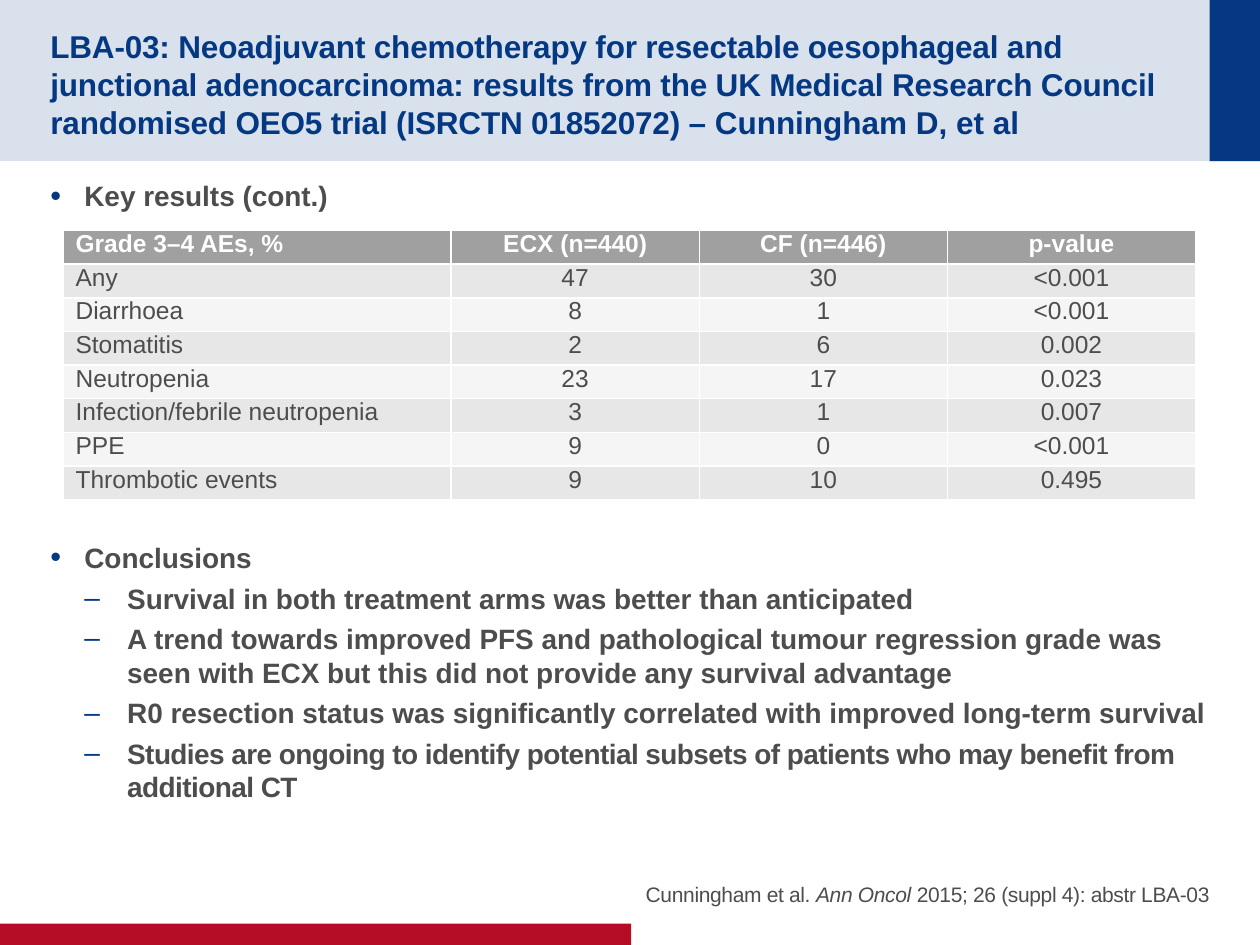
from lxml import etree
from pptx import Presentation
from pptx.dml.color import RGBColor
from pptx.enum.shapes import MSO_SHAPE
from pptx.enum.text import MSO_ANCHOR, MSO_AUTO_SIZE, PP_ALIGN
from pptx.oxml.ns import qn
from pptx.util import Inches, Pt

RECTANGLE = MSO_SHAPE.RECTANGLE
TOP, MIDDLE, BOTTOM = MSO_ANCHOR.TOP, MSO_ANCHOR.MIDDLE, MSO_ANCHOR.BOTTOM
LEFT, CENTER, RIGHT = PP_ALIGN.LEFT, PP_ALIGN.CENTER, PP_ALIGN.RIGHT
NO_AUTOFIT = MSO_AUTO_SIZE.NONE
TITLE_ONLY = 5

COLORS = {
    "navy": "043882", "pale": "D9E1EC", "red": "B60D27", "text": "4D4D4D",
    "white": "FFFFFF", "header": "A0A0A0", "odd": "E7E7E7", "even": "F5F5F5",
}

TITLE = [
    ("LBA-03: Neoadjuvant chemotherapy for resectable oesophageal and junctional "
     "adenocarcinoma: results from the UK Medical Research Council randomised OEO5 "
     "trial (ISRCTN 01852072) ", {"spacing": -0.1}),
    ("– Cunningham D, et al", {}),
]
ADVERSE_EVENTS = [
    ("Grade 3–4 AEs, %", "ECX (n=440)", "CF (n=446)", "p-value"),
    ("Any", "47", "30", "<0.001"),
    ("Diarrhoea", "8", "1", "<0.001"),
    ("Stomatitis", "2", "6", "0.002"),
    ("Neutropenia", "23", "17", "0.023"),
    ("Infection/febrile neutropenia", "3", "1", "0.007"),
    ("PPE", "9", "0", "<0.001"),
    ("Thrombotic events", "9", "10", "0.495"),
]
CONCLUSIONS = [
    ("Conclusions", 0, 0),
    ("Survival in both treatment arms was better than anticipated", 1, 0),
    ("A trend towards improved PFS and pathological tumour regression grade was "
     "seen with ECX but this did not provide any survival advantage", 1, 0),
    ("R0 resection status was significantly correlated with improved long-term "
     "survival", 1, 0),
    ("Studies are ongoing to identify potential subsets of patients who may "
     "benefit from additional CT", 1, -0.3),
]
CITATION = [
    ("Cunningham et al. ", {"spacing": -0.2}),
    ("Ann Oncol", {"spacing": -0.2, "italic": True}),
    (" 2015; 26 (suppl 4): abstr LBA-03", {"spacing": -0.2}),
]


class SlideBuilder:
    """Holds the house style and the slide being built."""

    font = "Arial"
    bullets = [("•", 0.27, 0.27, 110), ("–", 0.61, 0.34, 100)]

    def __init__(self, slide):
        self.slide = slide

    def color(self, name):
        return RGBColor.from_string(COLORS[name])

    def format_run(self, run, size, color, bold=False, italic=False, spacing=0):
        run.font.name = self.font
        run.font.size = Pt(size)
        run.font.bold = bold
        run.font.italic = italic
        run.font.color.rgb = self.color(color)
        if spacing:
            run._r.get_or_add_rPr().set("spc", str(round(spacing * 100)))

    def add_runs(self, paragraph, parts, size, color, bold=False):
        for text, options in parts:
            run = paragraph.add_run()
            run.text = text
            self.format_run(run, size, color, bold, **options)

    def set_frame(self, text_frame, anchor, top=0.0, bottom=0.0):
        text_frame.word_wrap = True
        text_frame.auto_size = NO_AUTOFIT
        text_frame.vertical_anchor = anchor
        text_frame.margin_left = text_frame.margin_right = 0
        text_frame.margin_top = Inches(top)
        text_frame.margin_bottom = Inches(bottom)

    def set_bullet(self, paragraph, level):
        character, margin, hanging, size = self.bullets[level]
        paragraph.level = level
        properties = paragraph._p.get_or_add_pPr()
        properties.set("marL", str(Inches(margin)))
        properties.set("indent", str(-Inches(hanging)))
        bullet_color = etree.SubElement(properties, qn("a:buClr"))
        etree.SubElement(bullet_color, qn("a:srgbClr"), val=COLORS["navy"])
        etree.SubElement(properties, qn("a:buSzPct"), val=str(size * 1000))
        etree.SubElement(properties, qn("a:buFont"), typeface=self.font)
        etree.SubElement(properties, qn("a:buChar"), char=character)

    def band(self, left, top, width, height, color):
        shape = self.slide.shapes.add_shape(
            RECTANGLE, Inches(left), Inches(top), Inches(width), Inches(height))
        shape.shadow.inherit = False
        shape.fill.solid()
        shape.fill.fore_color.rgb = self.color(color)
        shape.line.fill.background()

    def title(self, left, top, width, height, parts):
        title = self.slide.shapes.title
        title.left, title.top = Inches(left), Inches(top)
        title.width, title.height = Inches(width), Inches(height)
        self.set_frame(title.text_frame, MIDDLE, top=0.05)
        paragraph = title.text_frame.paragraphs[0]
        paragraph.alignment = LEFT
        self.add_runs(paragraph, parts, 18, "navy", bold=True)
        self.slide.shapes._spTree.append(title._element)

    def text_box(self, left, top, width, height):
        return self.slide.shapes.add_textbox(
            Inches(left), Inches(top), Inches(width), Inches(height)).text_frame

    def bullet_list(self, left, top, width, height, items):
        text_frame = self.text_box(left, top, width, height)
        self.set_frame(text_frame, TOP, top=0.05, bottom=0.05)
        text_frame.text = "\n".join(text for text, _, _ in items)
        for paragraph, (_, level, spacing) in zip(text_frame.paragraphs, items):
            paragraph.space_after = Pt(4)
            self.set_bullet(paragraph, level)
            self.format_run(paragraph.runs[0], 16, "text", bold=True, spacing=spacing)

    def citation(self, left, top, width, height, parts):
        text_frame = self.text_box(left, top, width, height)
        self.set_frame(text_frame, BOTTOM)
        paragraph = text_frame.paragraphs[0]
        paragraph.alignment = RIGHT
        paragraph.space_after = Pt(4)
        self.add_runs(paragraph, parts, 12, "text")

    def set_borders(self, cell):
        properties = cell._tc.get_or_add_tcPr()
        for position, side in enumerate(("a:lnT", "a:lnB")):
            line = etree.Element(qn(side), w=str(Pt(1)))
            fill = etree.SubElement(line, qn("a:solidFill"))
            etree.SubElement(fill, qn("a:srgbClr"), val=COLORS["white"])
            properties.insert(position, line)

    def fill_cell(self, cell, text, fill, color, alignment, bold):
        cell.fill.solid()
        cell.fill.fore_color.rgb = self.color(fill)
        cell.vertical_anchor = MIDDLE
        cell.text_frame.text = text
        paragraph = cell.text_frame.paragraphs[0]
        paragraph.alignment = alignment
        paragraph.line_spacing = Pt(12)
        self.format_run(paragraph.runs[0], 14, color, bold)
        self.set_borders(cell)

    def table(self, left, top, column_widths, height, rows):
        table = self.slide.shapes.add_table(
            len(rows), len(column_widths), Inches(left), Inches(top),
            Inches(sum(column_widths)), Inches(height)).table
        for column, width in zip(table.columns, column_widths):
            column.width = Inches(width)
        for row_index, values in enumerate(rows):
            header = row_index == 0
            fill = "header" if header else ("even", "odd")[row_index % 2]
            for column_index, value in enumerate(values):
                self.fill_cell(
                    table.cell(row_index, column_index), value, fill,
                    "white" if header else "text",
                    CENTER if column_index else LEFT, header)


def main():
    presentation = Presentation()
    presentation.slide_width, presentation.slide_height = Inches(10), Inches(7.5)
    slide = presentation.slides.add_slide(presentation.slide_layouts[TITLE_ONLY])
    builder = SlideBuilder(slide)
    builder.band(0, 0, 10, 1.28, "pale")
    builder.band(9.6, 0, 0.4, 1.28, "navy")
    builder.band(0, 7.33, 5.01, 0.17, "red")
    builder.title(0.4, 0.2, 9.01, 0.88, TITLE)
    builder.bullet_list(0.4, 1.37, 9.3, 0.4, [("Key results (cont.)", 0, 0)])
    builder.bullet_list(0.4, 4.24, 9.3, 2.32, CONCLUSIONS)
    builder.citation(5.08, 6.67, 4.52, 0.53, CITATION)
    builder.table(0.5, 1.83, [3.08, 1.97, 1.97, 1.97], 2.13, ADVERSE_EVENTS)
    presentation.save("out.pptx")


if __name__ == "__main__":
    main()
